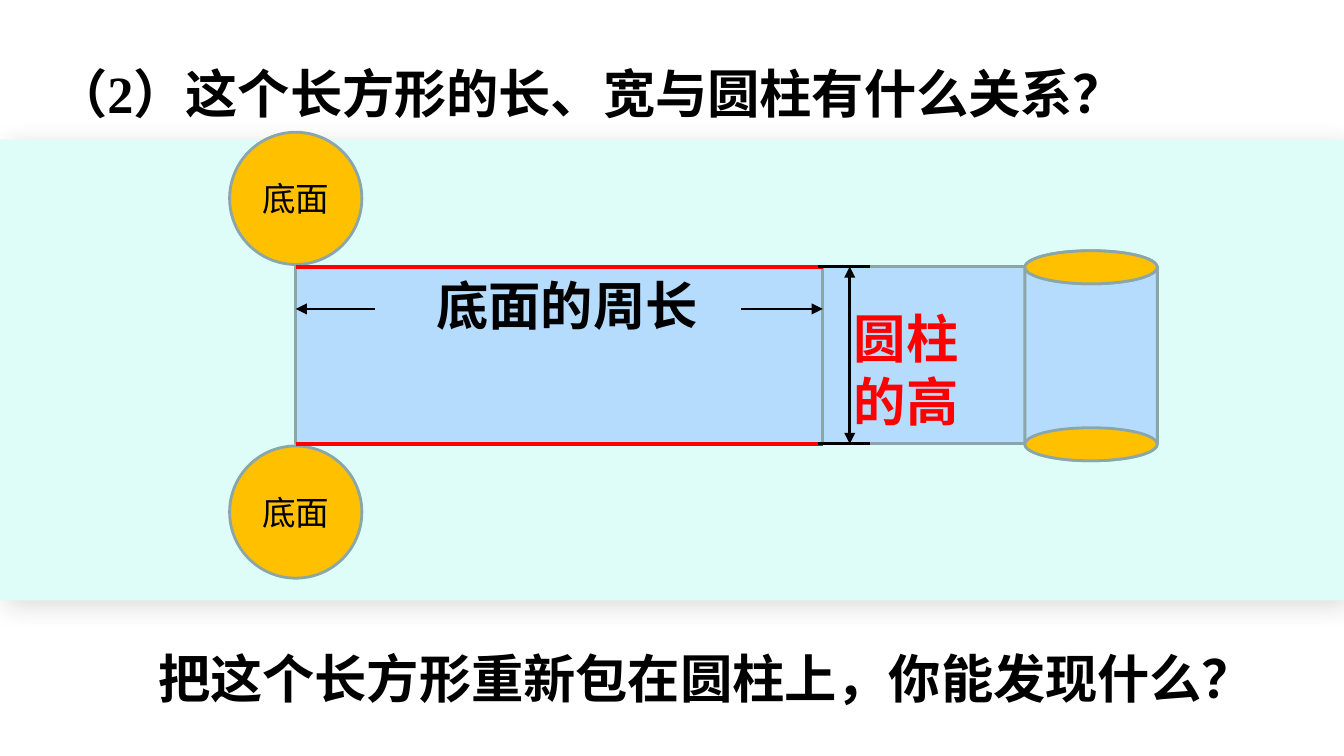
from lxml import etree
from pptx import Presentation
from pptx.dml.color import RGBColor
from pptx.enum import shapes, text
from pptx.oxml import ns, parse_xml
from pptx.util import Cm, Pt

CJK_FONT = "Noto Sans CJK SC"
HEADING = {"name": "Times New Roman", "size": Pt(28), "bold": True}
LABEL = {"name": CJK_FONT, "size": Pt(28), "bold": True}
BASE_LABEL = {"name": "Arial", "size": Pt(18), "bold": False}
GOLD, BLUE, OUTLINE, RED, BLACK = "FFC000", "B5DBFD", "8AA6A8", "FF0000", "000000"


def color(hex_value):
    return RGBColor.from_string(hex_value)


def write(shape, words, font, hex_value=BLACK, **paragraph_format):
    frame = shape.text_frame
    frame.text = words
    paragraph = frame.paragraphs[0]
    for name, value in paragraph_format.items():
        setattr(paragraph, name, value)
    run = paragraph.runs[0]
    for name, value in font.items():
        setattr(run.font, name, value)
    run.font.color.rgb = color(hex_value)
    east_asian = etree.SubElement(run.font._element, ns.qn("a:ea"))
    east_asian.set("typeface", CJK_FONT)


def format_frame(shape, wrap=True, anchor=text.MSO_ANCHOR.TOP):
    values = {
        "word_wrap": wrap,
        "auto_size": text.MSO_AUTO_SIZE.NONE,
        "vertical_anchor": anchor,
    }
    for name, value in values.items():
        setattr(shape.text_frame, name, value)


def add_label(slide, box, words, font, hex_value=BLACK, wrap=True, **paragraph_format):
    label = slide.shapes.add_textbox(*map(Cm, box))
    format_frame(label, wrap)
    write(label, words, font, hex_value, **paragraph_format)


def add_solid(slide, kind, box, fill, outline=OUTLINE):
    solid = slide.shapes.add_shape(kind, *map(Cm, box))
    solid.shadow.inherit = False
    solid.fill.solid()
    solid.fill.fore_color.rgb = color(fill)
    if outline:
        solid.line.color.rgb = color(outline)
        solid.line.width = Pt(1.5)
    else:
        solid.line.fill.background()
    return solid


def add_line(slide, start, end, hex_value=BLACK, width=1.5, arrows=()):
    line = slide.shapes.add_connector(
        shapes.MSO_CONNECTOR.STRAIGHT, *map(Cm, (*start, *end))
    )
    line.line.color.rgb = color(hex_value)
    line.line.width = Pt(width)
    for arrow in arrows:
        etree.SubElement(line.line._get_or_add_ln(), ns.qn(f"a:{arrow}")).set("type", "triangle")
    etree.SubElement(line._element.spPr, ns.qn("a:effectLst"))


def add_band(slide, box):
    band = add_solid(slide, shapes.MSO_SHAPE.RECTANGLE, box, "DEFDF8", None)
    properties = band._element.spPr
    properties.remove(properties.find(ns.qn("a:effectLst")))
    properties.append(parse_xml(
        f'<a:effectLst {ns.nsdecls("a")}>'
        f'<a:outerShdw blurRad="{Pt(15)}" dist="{Pt(5)}" dir="2700000" algn="tl" rotWithShape="0">'
        '<a:srgbClr val="000000"><a:alpha val="15000"/></a:srgbClr>'
        "</a:outerShdw></a:effectLst>"
    ))


def add_question(slide, box):
    title = slide.shapes.title
    for name, value in zip(("left", "top", "width", "height"), map(Cm, box)):
        setattr(title, name, value)
    format_frame(title)
    write(title, "（2）这个长方形的长、宽与圆柱有什么关系？", HEADING,
          alignment=text.PP_ALIGN.LEFT, line_spacing=1.2)


def add_base(slide, box):
    base = add_solid(slide, shapes.MSO_SHAPE.OVAL, box, GOLD)
    format_frame(base, False, text.MSO_ANCHOR.MIDDLE)
    write(base, "底面", BASE_LABEL, alignment=text.PP_ALIGN.CENTER)


def add_cylinder(slide, box):
    left, top, width, height = box
    cap_height = width / 4
    add_solid(slide, shapes.MSO_SHAPE.CAN, box, BLUE)
    for cap_top in (top, top + height - cap_height):
        add_solid(slide, shapes.MSO_SHAPE.OVAL, (left, cap_top, width, cap_height), GOLD)


def add_side_rectangle(slide, box):
    left, top, width, height = box
    right = left + width
    add_solid(slide, shapes.MSO_SHAPE.RECTANGLE, box, BLUE)
    for y in (top, top + height):
        add_line(slide, (left, y), (right, y), RED, 2.25)
    add_label(slide, (left + 2.41, top, 5.46, 1.45), "底面的周长", LABEL, wrap=False)
    arrow_y = top + 0.8
    for edge, inner in ((left, left + 1.5), (right, right - 1.55)):
        add_line(slide, (inner, arrow_y), (edge, arrow_y), arrows=["tailEnd"])


def add_height_dimension(slide, box):
    left, top, width, height = box
    bottom = top + height
    arrow_x = left + 0.61
    for y in (top, bottom):
        add_line(slide, (left, y), (left + width, y))
    add_line(slide, (arrow_x, top), (arrow_x, bottom), arrows=["headEnd", "tailEnd"])
    add_label(slide, (left + 0.44, top + 0.62, 3.28, 2.64), "圆柱的高", LABEL, RED)


def add_unrolled_cylinder(slide, box):
    left, top, width, height = box
    length, diameter = 9.96, 2.5
    right, bottom = left + width, top + height
    for base_top in (bottom + 0.04, top - diameter - 0.04):
        add_base(slide, (left - diameter / 2, base_top, diameter, diameter))
    add_solid(slide, shapes.MSO_SHAPE.RECTANGLE, (right - length, top, length, height), BLUE)
    add_cylinder(slide, (right - diameter, top - 0.3, diameter, height + 0.62))
    add_side_rectangle(slide, (left, top, length, height))
    add_height_dimension(slide, (left + length - 0.1, top, 1, height))


def main():
    presentation = Presentation()
    presentation.slide_width = Cm(25.4)
    presentation.slide_height = Cm(14.29)
    slide = presentation.slides.add_slide(presentation.slide_layouts[5])
    add_band(slide, (0, 2.64, 25.4, 8.71))
    add_question(slide, (0.79, 0.79, 20.8, 1.68))
    add_label(slide, (2.74, 11.86, 21.44, 1.68), "把这个长方形重新包在圆柱上，你能发现什么？",
              HEADING, line_spacing=1.2)
    add_unrolled_cylinder(slide, (5.59, 5.04, 16.28, 3.35))
    presentation.save("out.pptx")


if __name__ == "__main__":
    main()
